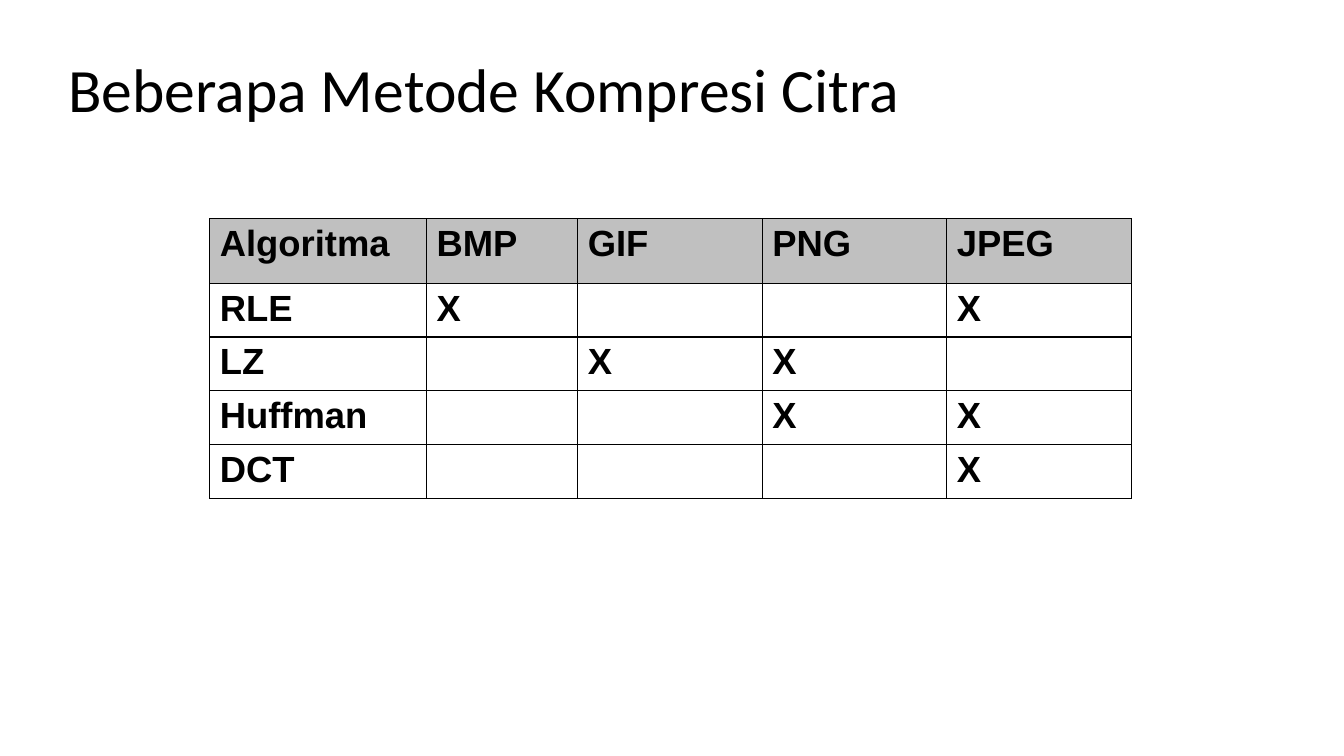
from dataclasses import dataclass

from pptx import Presentation
from pptx import util as u
from pptx.dml.color import RGBColor
from pptx.enum import text
from pptx.oxml import parse_xml
from pptx.oxml.ns import nsdecls

COLORS = {"ink": "000000", "header": "C0C0C0"}
FORMATS = ["BMP", "GIF", "PNG", "JPEG"]
COLUMN_WIDTHS = [2.15, 1.5, 1.83, 1.83, 1.83]
HEADER_HEIGHT, ROW_HEIGHT = 0.64, 0.53
HANGING_INDENT = 0.38


@dataclass
class Method:
    name: str
    formats: list[str]


METHODS = [
    Method("RLE", ["BMP", "JPEG"]),
    Method("LZ", ["GIF", "PNG"]),
    Method("Huffman", ["PNG", "JPEG"]),
    Method("DCT", ["JPEG"]),
]


def add_span(para, words: str, font: str, size: float, bold: bool = False) -> None:
    span = para.add_run()
    span.text = words
    span.font.name = font
    span.font.size = u.Pt(size)
    span.font.bold = bold
    span.font.color.rgb = RGBColor.from_string(COLORS["ink"])


def add_title(page, words: str) -> None:
    box = page.shapes.add_textbox(
        u.Inches(0.58), u.Inches(0.52), u.Inches(12.18), u.Inches(0.79))
    frame = box.text_frame
    frame.word_wrap = True
    frame.vertical_anchor = text.MSO_ANCHOR.MIDDLE
    para = frame.paragraphs[0]
    para.line_spacing = 0.9
    add_span(para, words, "Calibri", 44)


def add_borders(cell) -> None:
    properties = cell._tc.get_or_add_tcPr()
    for side in ("lnL", "lnR", "lnT", "lnB"):
        properties.append(parse_xml(
            f'<a:{side} {nsdecls("a")} w="{u.Pt(1)}"><a:solidFill>'
            f'<a:srgbClr val="{COLORS["ink"]}"/></a:solidFill></a:{side}>'))


def fill_cell(cell, words: str, is_header: bool) -> None:
    add_borders(cell)
    if is_header:
        cell.fill.solid()
        cell.fill.fore_color.rgb = RGBColor.from_string(COLORS["header"])
    else:
        cell.fill.background()
    if words:
        para = cell.text_frame.paragraphs[0]
        para.alignment = text.PP_ALIGN.JUSTIFY
        properties = para._p.get_or_add_pPr()
        properties.set("marL", str(u.Inches(HANGING_INDENT)))
        properties.set("indent", str(-u.Inches(HANGING_INDENT)))
        add_span(para, words, "Arial", 26, bold=True)


def add_method_table(page) -> None:
    rows = [["Algoritma", *FORMATS]]
    for method in METHODS:
        marks = ["X" if name in method.formats else "" for name in FORMATS]
        rows.append([method.name, *marks])
    heights = [HEADER_HEIGHT] + [ROW_HEIGHT] * len(METHODS)

    table = page.shapes.add_table(
        len(rows), len(COLUMN_WIDTHS), u.Inches(2.08), u.Inches(2.17),
        u.Inches(sum(COLUMN_WIDTHS)), u.Inches(sum(heights))).table
    table.first_row = False
    table.horz_banding = False
    for column, width in zip(table.columns, COLUMN_WIDTHS):
        column.width = u.Inches(width)
    for row_index, (row, height) in enumerate(zip(rows, heights)):
        table.rows[row_index].height = u.Inches(height)
        for column_index, words in enumerate(row):
            fill_cell(table.cell(row_index, column_index), words, row_index == 0)


def main() -> None:
    deck = Presentation()
    deck.slide_width = u.Inches(13.33)
    deck.slide_height = u.Inches(7.5)
    page = deck.slides.add_slide(deck.slide_layouts[6])

    # Title
    add_title(page, "Beberapa Metode Kompresi Citra")

    # Compression methods by file format
    add_method_table(page)

    deck.save("out.pptx")


if __name__ == "__main__":
    main()
